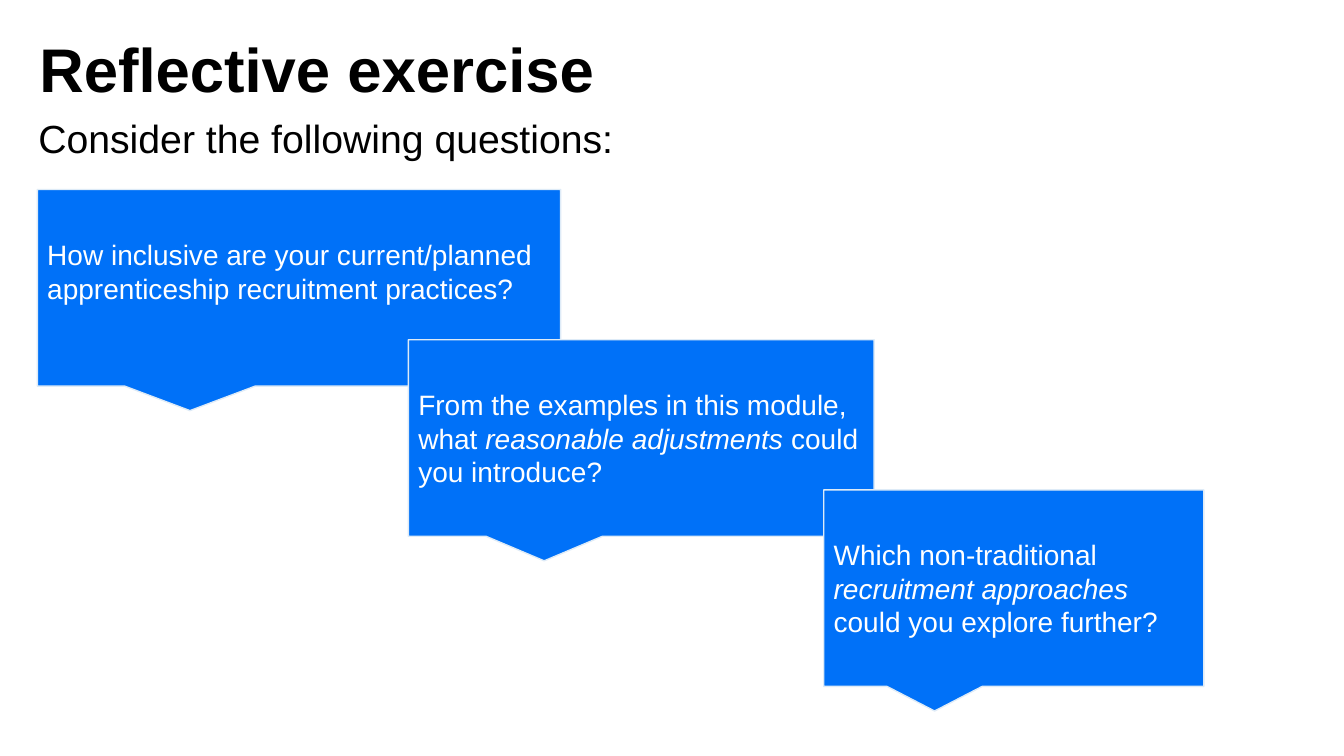
import pptx
import pptx.util
import pptx.dml.color
import pptx.enum.shapes
import pptx.enum.text
import lxml.etree

PX = 9144
HUES = {"black": "000000", "white": "FFFFFF", "blue": "0071F8", "pale": "DEEBF7"}
ANCHOR = pptx.enum.text.MSO_ANCHOR


def tint(name):
    return pptx.dml.color.RGBColor.from_string(HUES[name])


def write(shape, runs, anchor, size, hue, bold=False):
    frame = shape.text_frame
    form = {"word_wrap": True, "auto_size": pptx.enum.text.MSO_AUTO_SIZE.NONE,
            "vertical_anchor": anchor}
    for key, value in form.items():
        setattr(frame, key, value)
    para = frame.paragraphs[0]
    para.alignment = pptx.enum.text.PP_ALIGN.LEFT
    for text, slant in runs:
        run = para.add_run()
        run.text = text
        style = {"name": "Arial", "size": pptx.util.Pt(size), "bold": bold, "italic": slant}
        for key, value in style.items():
            setattr(run.font, key, value)
        run.font.color.rgb = tint(hue)
    return para


deck = pptx.Presentation()
deck.slide_width = 1333 * PX
deck.slide_height = 750 * PX
slide = deck.slides.add_slide(deck.slide_layouts[1])

title = slide.shapes.title
body = slide.placeholders[1]
heads = [
    (title, (29, 13, 1150, 118), "Reflective exercise", ANCHOR.MIDDLE, 44, True, 0),
    (body, (28, 114, 1150, 476), "Consider the following questions:", ANCHOR.TOP, 28, False, 10),
]
for shape, box, text, anchor, size, bold, gap in heads:
    for key, value in zip(("left", "top", "width", "height"), box):
        setattr(shape, key, value * PX)
    para = write(shape, [(text, False)], anchor, size, "black", bold)
    para.line_spacing = 0.9
    para.space_before = pptx.util.Pt(gap)

props = body.text_frame.paragraphs[0]._p.get_or_add_pPr()
props.set("marL", "0")
props.set("indent", "0")
lxml.etree.SubElement(props, pptx.oxml.ns.qn("a:buNone"))

TOP, STEP, HIGH = 188, 149, 195
asks = [
    (37, 519, 38, [("How inclusive are your current/planned apprenticeship recruitment practices?", False)]),
    (405, 462, 5, [("From the examples in this module, what ", False),
                   ("reasonable adjustments ", True),
                   ("could you introduce?", False)]),
    (817, 377, 5, [("Which non-traditional ", False),
                   ("recruitment approaches", True),
                   (" could you explore further?", False)]),
]
for row, (left, width, inset, runs) in enumerate(asks):
    call = slide.shapes.add_shape(
        pptx.enum.shapes.MSO_SHAPE.RECTANGULAR_CALLOUT,
        left * PX, (TOP + row * STEP) * PX, width * PX, HIGH * PX)
    call.shadow.inherit = False
    call.fill.solid()
    call.fill.fore_color.rgb = tint("blue")
    call.line.color.rgb = tint("pale")
    call.line.width = pptx.util.Pt(1)
    call.text_frame.margin_bottom = inset * PX
    write(call, runs, ANCHOR.MIDDLE, 20, "white")

deck.save("out.pptx")
